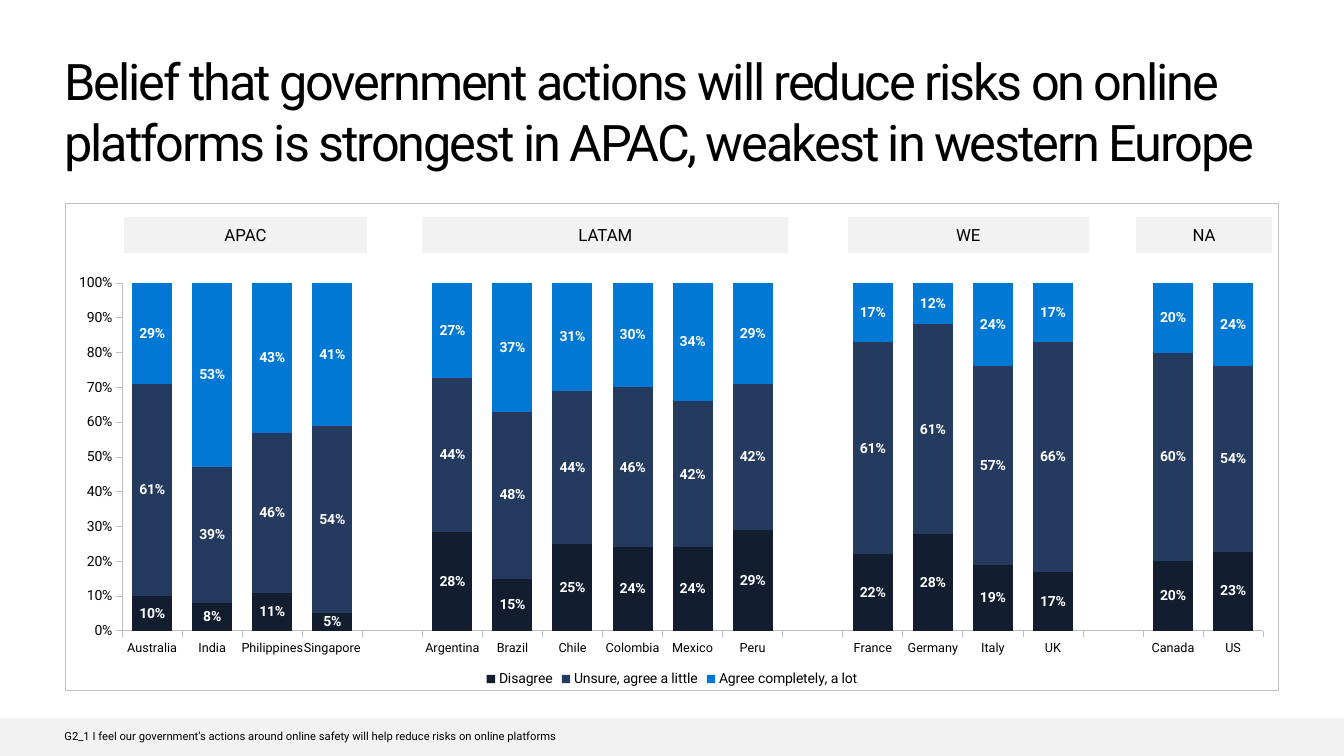
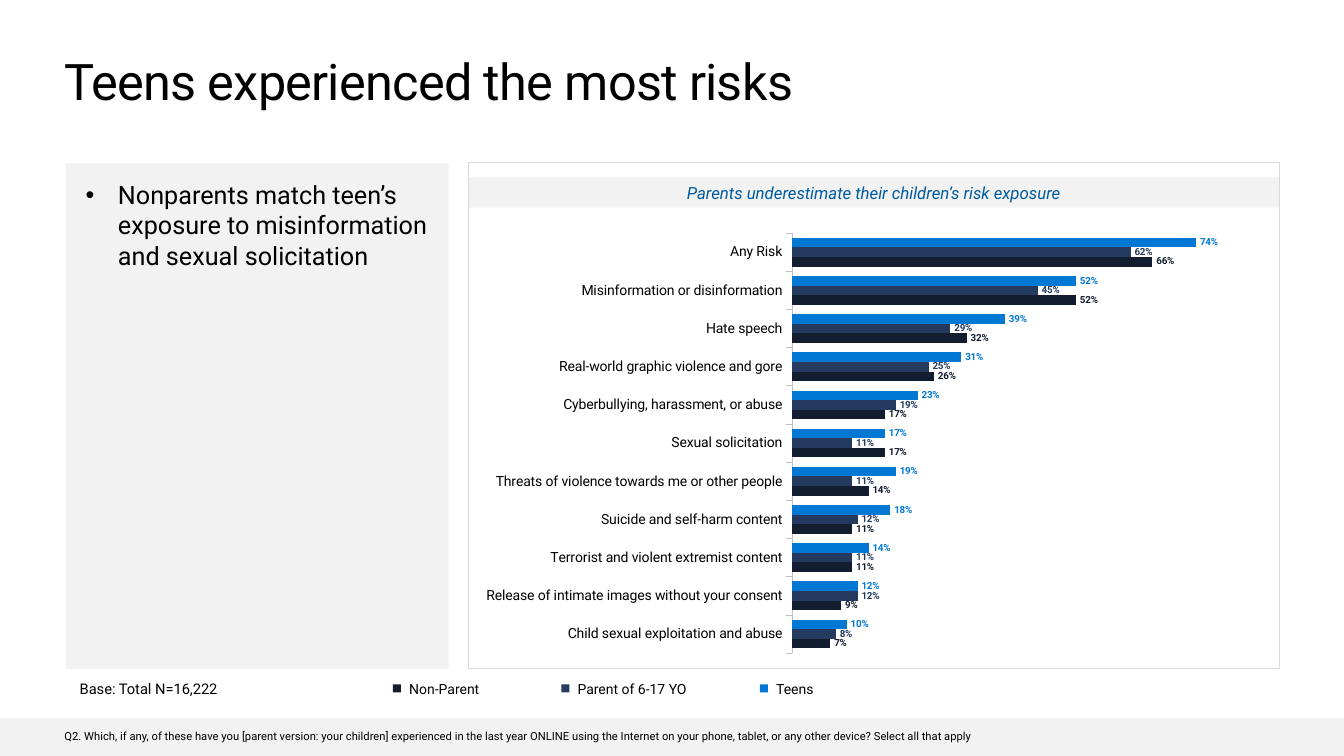
import pptx
import pptx.chart.data
import pptx.dml.color
import pptx.enum.chart
import pptx.enum.shapes
import pptx.enum.text
import pptx.oxml
import pptx.oxml.ns
import pptx.util

Pt = pptx.util.Pt
Inches = pptx.util.Inches
rgb = pptx.dml.color.RGBColor.from_string
qn = pptx.oxml.ns.qn
parse_xml = pptx.oxml.parse_xml
nsdecls = pptx.oxml.ns.nsdecls
ALIGN = pptx.enum.text.PP_ALIGN
ANCHOR = pptx.enum.text.MSO_ANCHOR
CHART = pptx.enum.chart.XL_CHART_TYPE
LABEL = pptx.enum.chart.XL_LABEL_POSITION
TICK = pptx.enum.chart.XL_TICK_MARK

FONT = "Roboto"
COLORS = {
    "text": "000000", "white": "FFFFFF", "panel": "F2F2F2",
    "frame": "D9D9D9", "axis": "BFBFBF", "accent": "005A9F",
    "dark": "121D2F", "navy": "243A5E", "blue": "0078D4",
}

# Lengths are percentages of the slide's width and height
WIDTH, HEIGHT = 13.33, 7.5
MARGIN, CONTENT = 4.8, 90.4

presentation = pptx.Presentation()
presentation.slide_width = Inches(WIDTH)
presentation.slide_height = Inches(HEIGHT)


def add_box(slide, area, text="", size=10, fill=None, line=None, color="text",
            align=ALIGN.LEFT, anchor=ANCHOR.TOP, inset=(0, 0), wrap=True):
    left, top, width, height = area
    frame = [Inches(WIDTH * left / 100), Inches(HEIGHT * top / 100),
             Inches(WIDTH * width / 100), Inches(HEIGHT * height / 100)]
    if fill or line:
        shape = slide.shapes.add_shape(pptx.enum.shapes.MSO_SHAPE.RECTANGLE, *frame)
        shape.shadow.inherit = False
    else:
        shape = slide.shapes.add_textbox(*frame)
    if fill:
        shape.fill.solid()
        shape.fill.fore_color.rgb = rgb(COLORS[fill])
    else:
        shape.fill.background()
    if line:
        shape.line.color.rgb = rgb(COLORS[line])
        shape.line.width = Pt(0.75)
    else:
        shape.line.fill.background()
    if text:
        text_frame = shape.text_frame
        text_frame.word_wrap = wrap
        text_frame.vertical_anchor = anchor
        text_frame.margin_left = text_frame.margin_right = Inches(inset[0])
        text_frame.margin_top = text_frame.margin_bottom = Inches(inset[1])
        paragraph = text_frame.paragraphs[0]
        paragraph.text = text
        paragraph.alignment = align
        paragraph.font.name = FONT
        paragraph.font.size = Pt(size)
        paragraph.font.color.rgb = rgb(COLORS[color])
    return shape


def add_chart(slide, kind, area, categories, series_rows, plot_area, gap, overlap,
              label_size, label_position, category_size, border=None):
    data = pptx.chart.data.CategoryChartData(number_format="0%")
    data.categories = categories
    for name, values, *_ in series_rows:
        data.add_series(name, [None if value is None else value / 100 for value in values])
    left, top, width, height = area
    chart = slide.shapes.add_chart(
        kind, Inches(WIDTH * left / 100), Inches(HEIGHT * top / 100),
        Inches(WIDTH * width / 100), Inches(HEIGHT * height / 100), data).chart
    chart.has_title = False
    chart.has_legend = False
    chart.font.name = FONT
    chart.font.size = Pt(10)
    chart.font.color.rgb = rgb(COLORS["text"])

    plot = chart.plots[0]
    plot.gap_width = gap
    plot.overlap = overlap
    plot.vary_by_categories = False
    for series, (_, _, color, label_color) in zip(plot.series, series_rows):
        series.format.fill.solid()
        series.format.fill.fore_color.rgb = rgb(COLORS[color])
        series.invert_if_negative = False
        labels = series.data_labels
        labels.show_value = True
        labels.number_format = "0%"
        labels.number_format_is_linked = False
        labels.position = label_position
        labels.font.name = FONT
        labels.font.size = Pt(label_size)
        labels.font.bold = True
        labels.font.color.rgb = rgb(COLORS[label_color])

    for axis, size in ((chart.category_axis, category_size), (chart.value_axis, 10)):
        axis.has_major_gridlines = False
        axis.major_tick_mark = TICK.OUTSIDE
        axis.minor_tick_mark = TICK.NONE
        axis.format.line.color.rgb = rgb(COLORS["axis"])
        axis.format.line.width = Pt(0.5)
        axis.tick_labels.font.name = FONT
        axis.tick_labels.font.size = Pt(size)
        axis.tick_labels.font.color.rgb = rgb(COLORS["text"])
    chart.value_axis.minimum_scale = 0

    # Fixed inner plot area
    plot_element = chart._chartSpace.find(qn("c:chart")).find(qn("c:plotArea"))
    old_layout = plot_element.find(qn("c:layout"))
    if old_layout is not None:
        plot_element.remove(old_layout)
    sizes = "".join(f'<c:{tag} val="{share}"/>' for tag, share in zip("xywh", plot_area))
    plot_element.insert(0, parse_xml(
        f'<c:layout {nsdecls("c")}><c:manualLayout><c:layoutTarget val="inner"/>'
        f'<c:xMode val="edge"/><c:yMode val="edge"/>{sizes}</c:manualLayout></c:layout>'))

    # Chart border
    stroke = "<a:noFill/>"
    if border:
        stroke = f'<a:solidFill><a:srgbClr val="{COLORS[border]}"/></a:solidFill>'
    chart._chartSpace.find(qn("c:chart")).addnext(parse_xml(
        f'<c:spPr {nsdecls("c", "a")}><a:noFill/>'
        f'<a:ln w="{Pt(0.75)}">{stroke}</a:ln></c:spPr>'))
    return chart


# Title, footer band and survey question on every slide
pages = [
    ("Belief that government actions will reduce risks on online platforms is "
     "strongest in APAC, weakest in western Europe", 16.13, -150,
     "G2_1 I feel our government’s actions around online safety will help reduce "
     "risks on online platforms"),
    ("Teens experienced the most risks", 8.13, -50,
     "Q2. Which, if any, of these have you [parent version: your children] experienced "
     "in the last year ONLINE using the Internet on your phone, tablet, or any other "
     "device? Select all that apply"),
]
for title, title_height, spacing, question in pages:
    slide = presentation.slides.add_slide(presentation.slide_layouts[6])
    title_box = add_box(slide, (MARGIN, 6.67, CONTENT, title_height), title, 36)
    run = title_box.text_frame.paragraphs[0].runs[0]
    run._r.get_or_add_rPr().set("spc", str(spacing))
    add_box(slide, (0, 94.95, 100, 5.05), fill="panel")
    add_box(slide, (MARGIN, 96.53, CONTENT, 1.73), question, 8)
region_slide, risk_slide = presentation.slides

# Slide 1: agreement by country, with an empty slot between regions
countries = ["Australia", "India", "Philippines", "Singapore", "",
             "Argentina", "Brazil", "Chile", "Colombia", "Mexico", "Peru", "",
             "France", "Germany", "Italy", "UK", "", "Canada", "US"]
agreement = [
    ("Disagree", [10, 8, 11, 5, None, 28, 15, 25, 24, 24, 29, None,
                  22, 28, 19, 17, None, 20, 23], "dark", "white"),
    ("Unsure, agree a little", [61, 39, 46, 54, None, 44, 48, 44, 46, 42, 42, None,
                                61, 61, 57, 66, None, 60, 54], "navy", "white"),
    ("Agree completely, a lot", [29, 53, 43, 41, None, 27, 37, 31, 30, 34, 29, None,
                                 17, 12, 24, 17, None, 20, 24], "blue", "white"),
]
country_chart = add_chart(
    region_slide, CHART.COLUMN_STACKED_100, (MARGIN, 26.8, CONTENT, 64.67), countries,
    agreement, (0.047, 0.164, 0.94, 0.713), 50, 100, 10, LABEL.CENTER, 9, "axis")
country_chart.value_axis.maximum_scale = 1
country_chart.value_axis.major_unit = 0.1
country_chart.value_axis.tick_labels.number_format = "0%"
country_chart.value_axis.tick_labels.number_format_is_linked = False
country_chart.has_legend = True
country_chart.legend.position = pptx.enum.chart.XL_LEGEND_POSITION.BOTTOM
country_chart.legend.include_in_layout = False
country_chart.legend.font.name = FONT
country_chart.legend.font.size = Pt(10)
country_chart.legend.font.color.rgb = rgb(COLORS["text"])

# Region headings
for region, left, width in (("APAC", 9.23, 18.08), ("LATAM", 31.43, 27.23),
                            ("WE", 63.08, 17.93), ("NA", 84.53, 10.13)):
    add_box(region_slide, (left, 28.7, width, 4.8), region, 12, "panel",
            align=ALIGN.CENTER, anchor=ANCHOR.MIDDLE, inset=(0, 0.02))

# Slide 2: takeaway panel
PANEL_HEIGHT = 66.93
panel = add_box(risk_slide, (4.88, 21.6, 28.5, PANEL_HEIGHT), fill="panel")
panel.text_frame.word_wrap = True
panel.text_frame.vertical_anchor = ANCHOR.TOP
panel.text_frame.margin_left = panel.text_frame.margin_right = Inches(0.2)
panel.text_frame.margin_top = panel.text_frame.margin_bottom = Inches(0.16)
takeaway = panel.text_frame.paragraphs[0]
takeaway.text = "Nonparents match teen’s exposure to misinformation and sexual solicitation"
takeaway.alignment = ALIGN.LEFT
properties = takeaway._p.get_or_add_pPr()
properties.set("marL", str(Inches(0.32)))
properties.set("indent", str(-Inches(0.32)))
properties.append(parse_xml(f'<a:buFont {nsdecls("a")} typeface="Arial"/>'))
properties.append(parse_xml(f'<a:buChar {nsdecls("a")} char="•"/>'))
takeaway.font.name = FONT
takeaway.font.size = Pt(18)
takeaway.font.color.rgb = rgb(COLORS["text"])

# Risks by audience
risks = ["Any Risk", "Misinformation or disinformation", "Hate speech",
         "Real-world graphic violence and gore", "Cyberbullying, harassment, or abuse",
         "Sexual solicitation", "Threats of violence towards me or other people",
         "Suicide and self-harm content", "Terrorist and violent extremist content",
         "Release of intimate images without your consent",
         "Child sexual exploitation and abuse"]
audiences = [
    ("Teens", [74, 52, 39, 31, 23, 17, 19, 18, 14, 12, 10], "blue", "blue"),
    ("Parent of 6-17 YO", [62, 45, 29, 25, 19, 11, 11, 12, 11, 12, 8], "navy", "navy"),
    ("Non-Parent", [66, 52, 32, 26, 17, 17, 14, 11, 11, 9, 7], "dark", "dark"),
]
CHART_LEFT, CHART_WIDTH = 34.88, 60.3
risk_chart = add_chart(
    risk_slide, CHART.BAR_CLUSTERED, (CHART_LEFT + 0.3, 23.73, CHART_WIDTH, 64.67), risks,
    audiences, (0.394, 0.11, 0.539, 0.859), 100, 0, 7, LABEL.OUTSIDE_END, 10)
risk_chart.category_axis.reverse_order = True
risk_chart.value_axis.maximum_scale = 0.8
risk_chart.value_axis.visible = False

banner = add_box(risk_slide, (CHART_LEFT, 23.47, CHART_WIDTH, 4),
                 "Parents underestimate their children’s risk exposure", 12, "panel",
                 color="accent", align=ALIGN.CENTER, anchor=ANCHOR.MIDDLE)
banner.text_frame.paragraphs[0].font.italic = True
add_box(risk_slide, (CHART_LEFT, 21.47, CHART_WIDTH, PANEL_HEIGHT), line="frame")

# Base size and legend
add_box(risk_slide, (5.93, 89.87, 20.18, 2.4), "Base: Total N=16,222", 10.5)
legend_places = ((57.75, 2.78), (42.98, 8.4), (30.45, 5.63))
for (name, _, color, _), (left, width) in zip(audiences, legend_places):
    add_box(risk_slide, (left, 90, width, 2.27), name, 10, wrap=False)
    add_box(risk_slide, (left - 1.22, 90.53, 0.6, 1.07), fill=color)

presentation.save("out.pptx")
